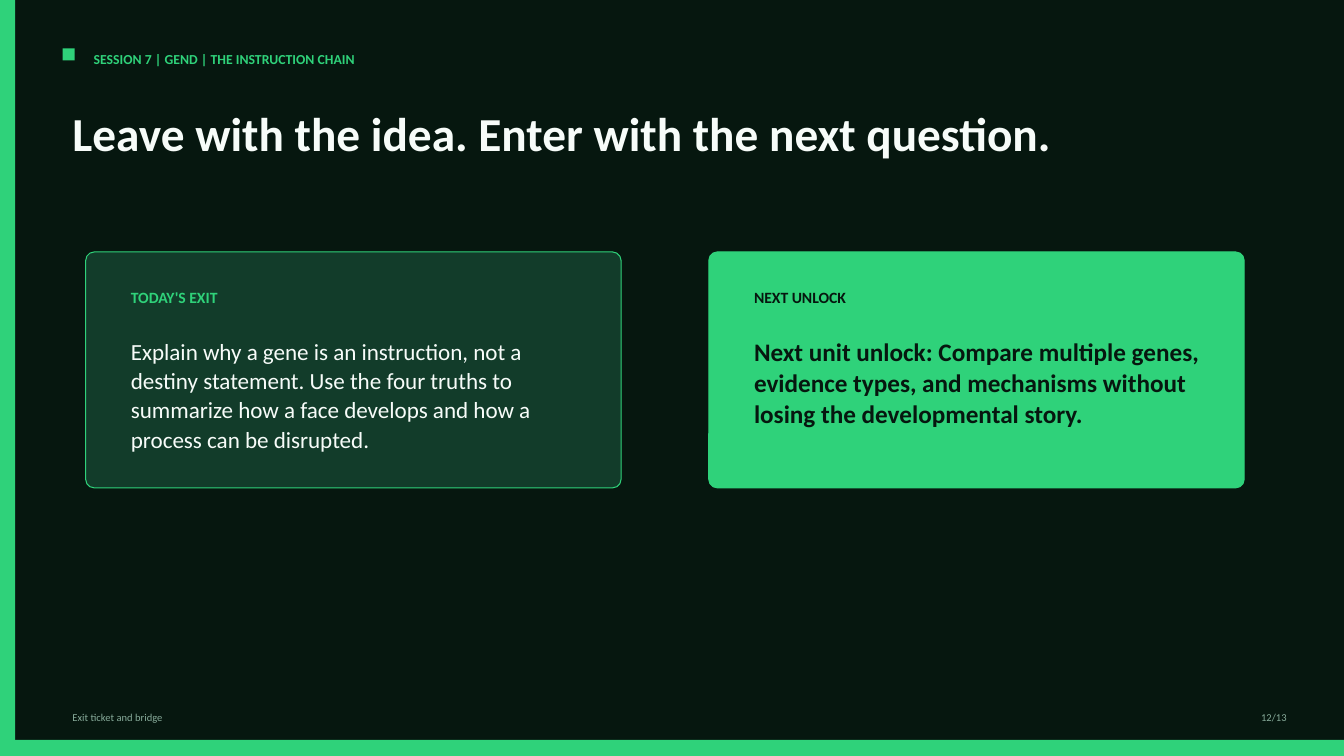
"""Build the exit ticket and bridge slide of the instruction chain session."""
import pptx
import pptx.dml.color
import pptx.enum.shapes
import pptx.enum.text
import pptx.util
from pptx.util import Inches

GREEN, DARK, PALE, MUTED, FOREST = "2FD27A", "06170F", "F7FCF9", "87AB9A", "123C2A"
SHAPES = pptx.enum.shapes.MSO_SHAPE
ALIGN = pptx.enum.text.PP_ALIGN
color = pptx.dml.color.RGBColor.from_string


def add_block(kind, left, top, width, height, fill):
    block = slide.shapes.add_shape(kind, Inches(left), Inches(top), Inches(width), Inches(height))
    block.shadow.inherit = False
    block.fill.solid()
    block.fill.fore_color.rgb = color(fill)
    block.line.fill.background()
    return block


def add_text(text, left, top, width, height, size, ink, bold=False, spacing=None, align=ALIGN.LEFT):
    box = slide.shapes.add_textbox(Inches(left), Inches(top), Inches(width), Inches(height))
    box.text_frame.word_wrap = True
    paragraph = box.text_frame.paragraphs[0]
    paragraph.text = text
    paragraph.alignment = align
    paragraph.line_spacing = spacing
    font = paragraph.runs[0].font
    font.name = "Calibri"
    font.size = pptx.util.Pt(size)
    font.bold = bold
    font.color.rgb = color(ink)


deck = pptx.Presentation()
deck.slide_width = Inches(13.33)
deck.slide_height = Inches(7.5)
slide = deck.slides.add_slide(deck.slide_layouts[6])
slide.background.fill.solid()
slide.background.fill.fore_color.rgb = color(DARK)

add_block(SHAPES.RECTANGLE, 0, 0, 0.15, 7.5, GREEN)
add_block(SHAPES.RECTANGLE, 0, 7.34, 13.33, 0.16, GREEN)
add_block(SHAPES.RECTANGLE, 0.62, 0.48, 0.12, 0.12, GREEN)

add_text("SESSION 7 | GEND | THE INSTRUCTION CHAIN", 0.83, 0.45, 6.46, 0.25, 9.8, GREEN, bold=True)
add_text("Exit ticket and bridge", 0.62, 7, 9.38, 0.19, 7.5, MUTED)
add_text("12/13", 12.03, 7, 0.83, 0.19, 7.5, MUTED, align=ALIGN.RIGHT)
add_text("Leave with the idea. Enter with the next question.",
         0.62, 1.04, 11.46, 0.88, 33.8, PALE, bold=True, spacing=0.92)

cards = [
    (0.85, FOREST, "TODAY'S EXIT", GREEN, 2.08,
     "Explain why a gene is an instruction, not a destiny statement. Use the four truths to "
     "summarize how a face develops and how a process can be disrupted.",
     16.5, PALE, False, 1.06),
    (7.03, GREEN, "NEXT UNLOCK", DARK, 2.29,
     "Next unit unlock: Compare multiple genes, evidence types, and mechanisms without "
     "losing the developmental story.",
     18, DARK, True, 1.02),
]
for left, fill, label, label_ink, label_width, message, size, ink, bold, spacing in cards:
    card = add_block(SHAPES.ROUNDED_RECTANGLE, left, 2.5, 5.31, 2.34, fill)
    card.adjustments[0] = 0.036
    card.line.color.rgb = color(GREEN)
    card.line.width = pptx.util.Pt(0.75)
    add_text(label, left + 0.35, 2.81, label_width, 0.26, 11.2, label_ink, bold=True)
    add_text(message, left + 0.35, 3.28, 4.69, 1.15, size, ink, bold, spacing)

deck.save("out.pptx")
